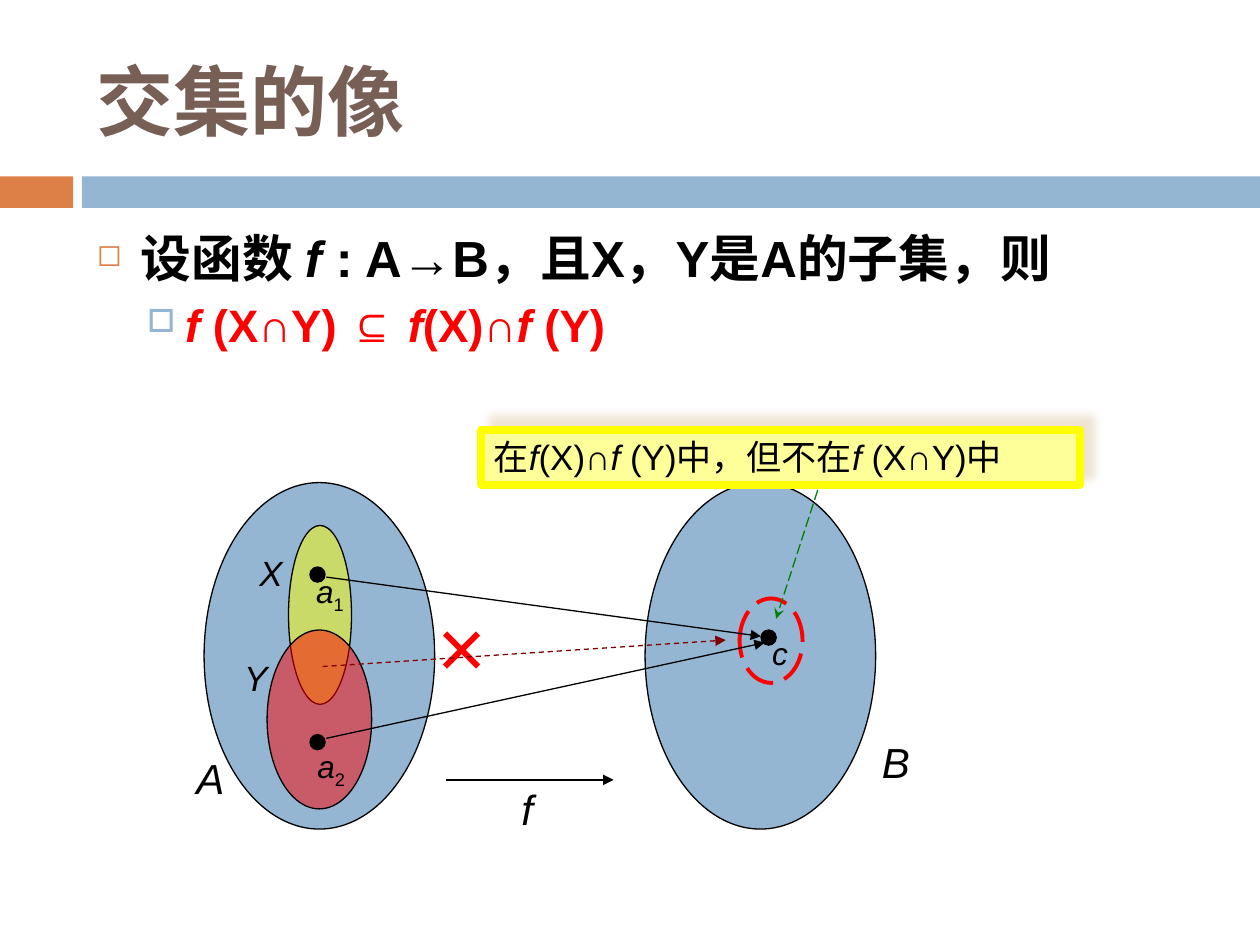
from lxml.etree import SubElement
from pptx import Presentation
from pptx.dml.color import RGBColor
from pptx.enum.dml import MSO_LINE as Dash
from pptx.enum.shapes import MSO_CONNECTOR as Connector, MSO_SHAPE as Shape
from pptx.enum.text import MSO_ANCHOR as Anchor
from pptx.oxml.ns import qn
from pptx.util import Inches, Pt

THEME = {
    "font": "Arial",
    "black": "000000", "red": "FF0000", "maroon": "800000", "green": "008000",
    "blue": "94B6D2", "orange": "DD8047", "brown": "775F55", "yellow": "FFFF00",
    "pale_yellow": "FFFF99", "shadow": "EBDDC3",
    "title": 44, "body": 29, "sub_body": 26, "set_name": 24, "subset_name": 20,
    "point_name": 18, "cross": 48, "thin": 0.75, "dashed": 2.25, "frame": 4.5,
}

# Runs are (text, style); style is "" for upright, "i" for italic, "sub" for subscript.
TITLE = [("交集的像", "")]
BULLETS = [
    {"runs": [("设函数 ", ""), ("f ", "i"), (": A→B，且X，Y是A的子集，则", "")],
     "size": "body", "color": "black", "level": 0, "before": 7,
     "indent": (0.35, -0.35), "mark": ("◻", "orange", 60)},
    {"runs": [("f ", "i"), ("(X∩Y) ⊆ ", ""), ("f", "i"), ("(X)∩", ""), ("f ", "i"), ("(Y)", "")],
     "size": "sub_body", "color": "red", "level": 1, "before": 5.5,
     "indent": (0.7, -0.3), "mark": ("□", "blue", 70)},
]
CALLOUT = [("在", ""), ("f", "i"), ("(X)∩", ""), ("f ", "i"), ("(Y)中，但不在", ""),
           ("f ", "i"), ("(X∩Y)中", "")]

BANDS = [((0, 1.4, 0.58, 0.25), "orange"), ((0.65, 1.4, 9.35, 0.25), "blue")]
SETS = [  # place, fill, opacity in percent
    ((1.62, 3.83, 1.83, 2.75), "blue", 100),
    ((5.12, 3.83, 1.83, 2.75), "blue", 100),
    ((2.29, 4.17, 0.5, 1.42), "yellow", 50),
    ((2.12, 5, 0.83, 1.42), "red", 50),
]
POINT_SIZE = 0.12
POINTS = [(2.46, 4.5), (2.46, 5.83), (6.04, 5)]
LABELS = [  # place, runs, size, colour
    ((1.46, 5.92, 0.5, 0.5), [("A", "i")], "set_name", "black"),
    ((6.9, 5.8, 0.5, 0.5), [("B", "i")], "set_name", "black"),
    ((4.04, 6.17, 0.72, 0.5), [("f", "i")], "set_name", "black"),
    ((1.96, 4.33, 0.5, 0.43), [("X", "i")], "subset_name", "black"),
    ((1.84, 5.16, 0.5, 0.43), [("Y", "i")], "subset_name", "black"),
    ((2.41, 4.49, 0.42, 0.4), [("a", "i"), ("1", "sub")], "point_name", "black"),
    ((2.42, 5.88, 0.42, 0.4), [("a", "i"), ("2", "sub")], "point_name", "black"),
    ((6.03, 4.98, 0.42, 0.4), [("c", "i")], "point_name", "black"),
    ((3.37, 4.67, 0.58, 0.9), [("×", "")], "cross", "red"),
]
ARROWS = [  # start, end, colour, dash, head
    ((2.59, 4.58), (6.04, 5.05), "black", None, "triangle"),
    ((2.59, 5.86), (6.07, 5.1), "black", None, "triangle"),
    ((3.54, 6.19), (4.87, 6.19), "black", None, "triangle"),
    ((2.56, 5.29), (5.76, 5.08), "maroon", Dash.DASH, "triangle"),
    ((6.49, 3.89), (6.16, 4.91), "green", Dash.LONG_DASH, "stealth"),
]


def inches(values):
    return [Inches(value) for value in values]


def rgb(name):
    return RGBColor.from_string(THEME[name])


def add_color(parent, name, opacity=100):
    color = SubElement(parent, qn("a:srgbClr"), val=THEME[name])
    if opacity < 100:
        SubElement(color, qn("a:alpha"), val=str(opacity * 1000))


def set_line(line, color, width="thin", dash=None):
    line.color.rgb = rgb(color)
    line.width = Pt(THEME[width])
    if dash:
        line.dash_style = dash


def add_shape(slide, kind, place, fill=None, opacity=100, line=None, width="thin", dash=None):
    shape = slide.shapes.add_shape(kind, *inches(place))
    shape.shadow.inherit = False
    if fill:
        shape.fill.solid()
        shape.fill.fore_color.rgb = rgb(fill)
        if opacity < 100:
            color = shape.fill._xPr.find(qn("a:solidFill")).find(qn("a:srgbClr"))
            SubElement(color, qn("a:alpha"), val=str(opacity * 1000))
    else:
        shape.fill.background()
    if line:
        set_line(shape.line, line, width, dash)
    else:
        shape.line.fill.background()
    return shape


def write(para, runs, size, color, bold=None):
    font = para.font
    font.name, font.size, font.bold = THEME["font"], Pt(THEME[size]), bold
    font.color.rgb = rgb(color)
    for text, style in runs:
        span = para.add_run()
        span.text = text
        if style == "i":
            span.font.italic = True
        elif style == "sub":
            span._r.get_or_add_rPr().set("baseline", "-25000")


def add_text_box(slide, place, anchor=Anchor.TOP):
    frame = slide.shapes.add_textbox(*inches(place)).text_frame
    frame.word_wrap = True
    frame.vertical_anchor = anchor
    return frame


def add_bullet(para, level, indent, mark):
    para.level = level
    symbol, color, percent = mark
    props = para._p.get_or_add_pPr()
    left, first = inches(indent)
    props.set("marL", str(left))
    props.set("indent", str(first))
    add_color(SubElement(props, qn("a:buClr")), color)
    SubElement(props, qn("a:buSzPct"), val=str(percent * 1000))
    SubElement(props, qn("a:buChar"), char=symbol)


def add_arrow(slide, start, end, color, dash, head):
    arrow = slide.shapes.add_connector(Connector.STRAIGHT, *inches(start + end))
    set_line(arrow.line, color, dash=dash)
    SubElement(arrow.line._get_or_add_ln(), qn("a:tailEnd"), type=head)
    SubElement(arrow._element.spPr, qn("a:effectLst"))


def add_callout(slide):
    box = add_shape(slide, Shape.RECTANGLE, (3.82, 3.41, 4.75, 0.44), "pale_yellow",
                    line="yellow", width="frame")
    effects = box._element.spPr.find(qn("a:effectLst"))
    shadow = SubElement(effects, qn("a:outerShdw"), blurRad=str(Pt(5)), dist=str(Pt(8.5)),
                        dir=str(315 * 60000), algn="ctr", rotWithShape="0")
    add_color(shadow, "shadow", 75)
    frame = box.text_frame
    frame.word_wrap = True
    frame.vertical_anchor = Anchor.TOP
    para = frame.paragraphs[0]
    para.alignment = 1
    write(para, CALLOUT, "subset_name", "black")


def main():
    deck = Presentation()
    deck.slide_width, deck.slide_height = Inches(10), Inches(7.5)
    slide = deck.slides.add_slide(deck.slide_layouts[6])

    for place, fill in BANDS:
        add_shape(slide, Shape.RECTANGLE, place, fill)
    title = add_text_box(slide, (0.67, 0.25, 8.92, 1.08), Anchor.MIDDLE)
    write(title.paragraphs[0], TITLE, "title", "brown", bold=True)

    body = add_text_box(slide, (0.67, 1.75, 8.92, 4.92))
    for index, item in enumerate(BULLETS):
        para = body.add_paragraph() if index else body.paragraphs[0]
        add_bullet(para, item["level"], item["indent"], item["mark"])
        para.space_before = Pt(item["before"])
        write(para, item["runs"], item["size"], item["color"], bold=True)

    for place, fill, opacity in SETS:
        add_shape(slide, Shape.OVAL, place, fill, opacity, line="black")
    for left, top in POINTS:
        add_shape(slide, Shape.OVAL, (left, top, POINT_SIZE, POINT_SIZE), "black", line="black")
    for place, runs, size, color in LABELS:
        write(add_text_box(slide, place).paragraphs[0], runs, size, color)
    add_shape(slide, Shape.OVAL, (5.87, 4.75, 0.5, 0.67), line="red", width="dashed",
              dash=Dash.LONG_DASH)
    add_callout(slide)
    for arrow in ARROWS:
        add_arrow(slide, *arrow)

    deck.save("out.pptx")


if __name__ == "__main__":
    main()
